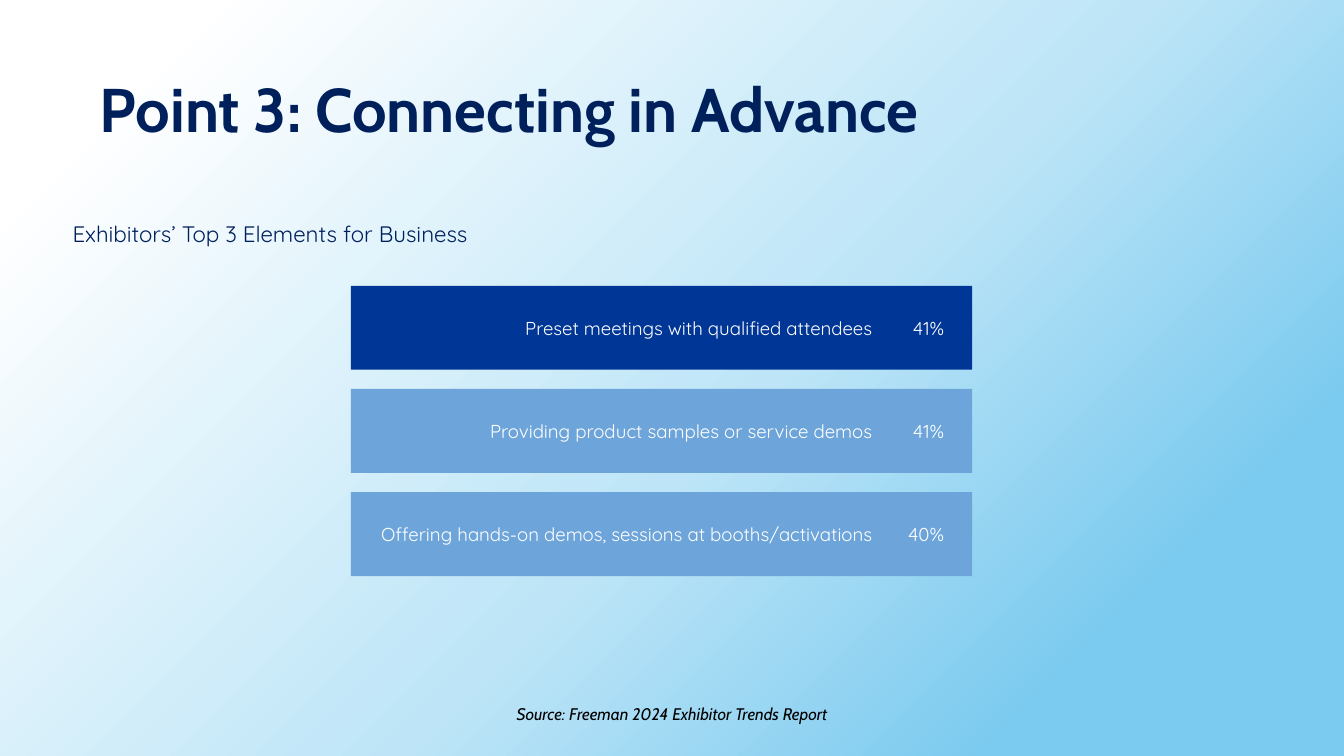
from dataclasses import dataclass

from lxml import etree
from pptx import Presentation
from pptx.dml.color import RGBColor
from pptx.enum.shapes import MSO_SHAPE
from pptx.enum.text import MSO_ANCHOR, MSO_AUTO_SIZE, PP_ALIGN
from pptx.oxml import parse_xml
from pptx.oxml.ns import nsdecls, qn
from pptx.util import Inches, Pt

RECT = MSO_SHAPE.RECTANGLE
MIDDLE, TOP = MSO_ANCHOR.MIDDLE, MSO_ANCHOR.TOP
LEFT, CENTER = PP_ALIGN.LEFT, PP_ALIGN.CENTER
FIT_SHAPE = MSO_AUTO_SIZE.SHAPE_TO_FIT_TEXT
TITLE_ONLY = 5


@dataclass(frozen=True)
class Theme:
    """Colours, fonts and type sizes of the deck."""
    navy: str = "00205C"
    strong: str = "003696"
    soft: str = "6DA5DB"
    white: str = "FFFFFF"
    black: str = "000000"
    stops: tuple = ((17, "7BCAEF"), (45, "BDE5F7"), (90, "FFFFFF"))
    stop_alpha: int = 50
    head: str = "Cabin"
    body: str = "Quicksand"
    title_pt: float = 58.7
    lead_pt: float = 21.3
    bar_pt: float = 17.8
    source_pt: float = 16


class SlideBuilder:
    """Places styled elements by percentages of the slide's size."""

    def __init__(self, prs, theme):
        """Add a title-only slide to the deck."""
        self.prs, self.theme = prs, theme
        self.s = prs.slides.add_slide(prs.slide_layouts[TITLE_ONLY])

    def box(self, x, y, w, h):
        """Turn percentages into slide lengths."""
        sw, sh = self.prs.slide_width, self.prs.slide_height
        return [int(v * full / 100) for v, full in zip((x, y, w, h), (sw, sh, sw, sh))]

    def style(self, p, font, size, color, align=LEFT, bold=False, italic=False):
        """Format a whole paragraph."""
        p.alignment = align
        p.font.name, p.font.size = font, Pt(size)
        p.font.bold, p.font.italic = bold, italic
        p.font.color.rgb = RGBColor.from_string(color)

    def background(self):
        """Fill the slide with a gradient spreading from the bottom right."""
        t = self.theme
        stops = "".join(
            f'<a:gs pos="{pos * 1000}"><a:srgbClr val="{color}">'
            f'<a:alpha val="{t.stop_alpha * 1000}"/></a:srgbClr></a:gs>'
            for pos, color in t.stops)
        self.s.element.cSld.insert(0, parse_xml(
            f'<p:bg {nsdecls("p", "a")}><p:bgPr><a:gradFill><a:gsLst>{stops}</a:gsLst>'
            '<a:path path="circle"><a:fillToRect l="100000" t="100000"/></a:path>'
            '</a:gradFill><a:effectLst/></p:bgPr></p:bg>'))

    def title(self, text, *area):
        """Write and place the slide title."""
        t, sp = self.theme, self.s.shapes.title
        sp.left, sp.top, sp.width, sp.height = self.box(*area)
        tf = sp.text_frame
        tf.text, tf.vertical_anchor = text, MIDDLE
        tf.auto_size = MSO_AUTO_SIZE.NONE
        p = tf.paragraphs[0]
        p.line_spacing = 0.9
        self.style(p, t.head, t.title_pt, t.navy, bold=True)

    def text(self, text, *area, inset=None, wrap=True, **look):
        """Add a text box of one paragraph."""
        tf = self.s.shapes.add_textbox(*self.box(*area)).text_frame
        tf.text, tf.word_wrap, tf.auto_size = text, wrap, FIT_SHAPE
        tf.vertical_anchor = TOP
        if inset is not None:
            tf.margin_left = tf.margin_right = Inches(inset)
            tf.margin_top = tf.margin_bottom = Inches(inset)
        self.style(tf.paragraphs[0], **look)

    def bar(self, label, value, fill, *area, tabs):
        """Add a bar whose label and value end at right tab stops."""
        t = self.theme
        sp = self.s.shapes.add_shape(RECT, *self.box(*area))
        sp.shadow.inherit = False
        sp.fill.solid()
        sp.fill.fore_color.rgb = RGBColor.from_string(fill)
        sp.line.fill.background()
        tf = sp.text_frame
        tf.text, tf.word_wrap, tf.vertical_anchor = f"\t{label}\t{value}", True, MIDDLE
        tf.margin_right = Inches(0.36)
        p = tf.paragraphs[0]
        tab_list = etree.SubElement(p._p.get_or_add_pPr(), qn("a:tabLst"))
        for pos in tabs:
            etree.SubElement(tab_list, qn("a:tab"), pos=str(Inches(pos)), algn="r")
        self.style(p, t.body, t.bar_pt, t.white)


def main():
    """Build and save the slide."""
    t = Theme()
    prs = Presentation()
    prs.slide_width, prs.slide_height = Inches(17.78), Inches(10)
    b = SlideBuilder(prs, t)
    b.background()
    b.title("Point 3: Connecting in Advance", 6.86, 5.3, 86.22, 19.3)
    b.text("Exhibitors’ Top 3 Elements for Business", 5.4, 29.1, 56.69, 3.6,
           inset=0, font=t.body, size=t.lead_pt, color=t.navy)
    bars = (("Preset meetings with qualified attendees", "41%", t.strong),
            ("Providing product samples or service demos", "41%", t.soft),
            ("Offering hands-on demos, sessions at booths/activations", "40%", t.soft))
    for i, (label, value, fill) in enumerate(bars):
        b.bar(label, value, fill, 26.1, 37.8 + 13.65 * i, 46.23, 11.1, tabs=(6.8, 7.75))
    b.text("Source: Freeman 2024 Exhibitor Trends Report", 36.95, 92.6, 26.1, 3.7,
           wrap=False, font=t.head, size=t.source_pt, color=t.black,
           align=CENTER, italic=True)
    prs.save("out.pptx")


if __name__ == "__main__":
    main()
